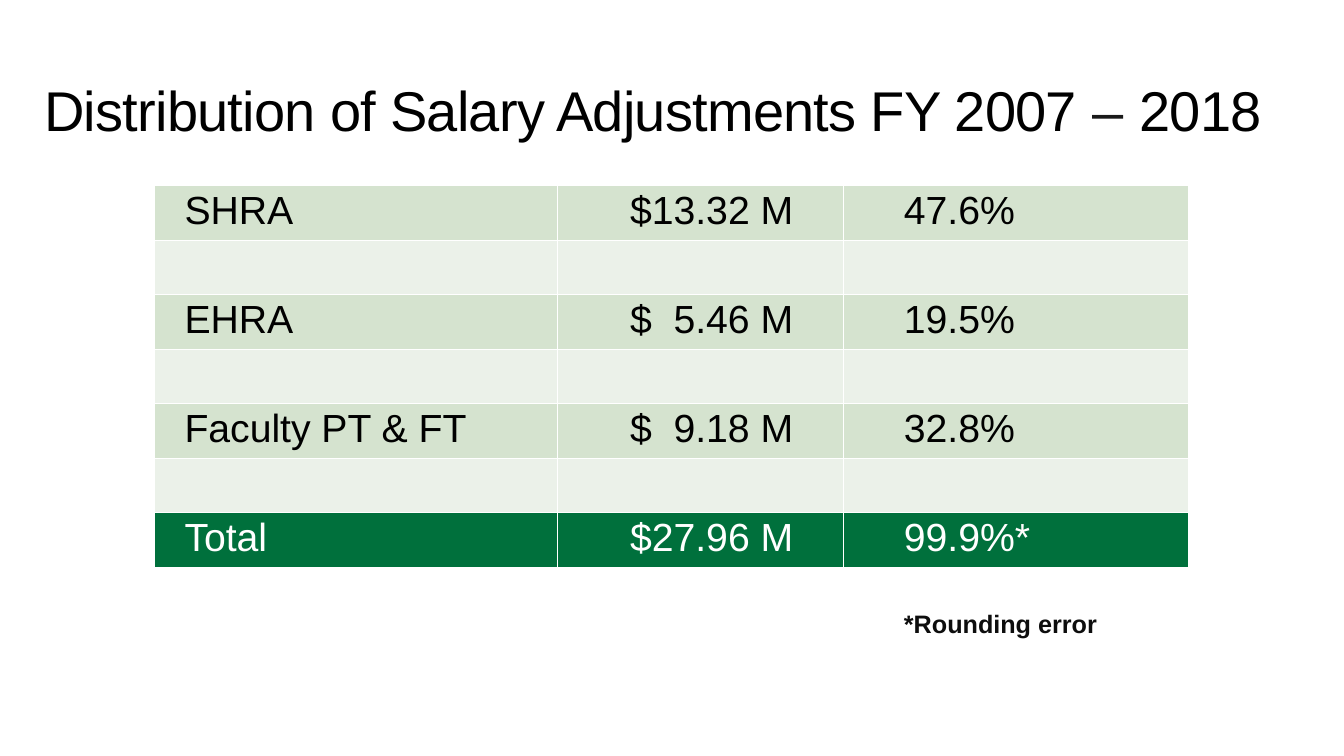
from lxml.etree import SubElement
from pptx import Presentation
from pptx.dml.color import RGBColor
from pptx.enum.text import MSO_ANCHOR as Anchor, PP_ALIGN as Align
from pptx.oxml import parse_xml
from pptx.oxml.ns import nsdecls, qn
from pptx.util import Cm, Pt

# Content
FONT = "Arial"
BLACK, INK, WHITE = "000000", "0D0D0D", "FFFFFF"
SAGE, MIST, GREEN = "D5E3CF", "EBF1E9", "00703C"

# text, colour, letter spacing in hundredths of a point
TITLE = [
    ("Distribution of Salary Adjustments FY 2007", BLACK, -50),
    (" – ", "1A1A1A", 0),
    ("2018", BLACK, -50),
]
ADJUSTMENTS = [
    ("SHRA", "$13.32 M", "47.6%"),
    ("EHRA", "$  5.46 M", "19.5%"),
    ("Faculty PT & FT", "$  9.18 M", "32.8%"),
]
TOTAL = ("Total", "$27.96 M", "99.9%*")
FOOTNOTE = "*Rounding error"

# width, left inset, right inset, alignment
COLUMNS = [
    (10.16, 0.76, 0.25, Align.LEFT),
    (7.21, 0.51, 1.27, Align.RIGHT),
    (8.69, 1.52, 1.27, Align.LEFT),
]
ROW_HEIGHT, GAP_HEIGHT, FOOTNOTE_HEIGHT = 1.36, 0.98, 1.65
TABLE_LEFT, TABLE_TOP = 3.89, 4.67
EMPTY = ("", "", "")


def color(hex_code):
    return RGBColor.from_string(hex_code)


def add_run(paragraph, text, size, hex_code, bold=False):
    run = paragraph.add_run()
    run.text = text
    run.font.name = FONT
    run.font.size = Pt(size)
    run.font.bold = bold
    run.font.color.rgb = color(hex_code)
    return run


def add_borders(cell):
    properties = cell._tc.get_or_add_tcPr()
    for position, side in enumerate(("lnL", "lnR", "lnT", "lnB")):
        line = parse_xml(f'<a:{side} {nsdecls("a")} w="{Pt(1)}"/>')
        fill = SubElement(line, qn("a:solidFill"))
        SubElement(fill, qn("a:srgbClr"), val=WHITE)
        properties.insert(position, line)


# Rows: texts, height, fill, size, text colour, bold
rows = []
for adjustment in ADJUSTMENTS:
    rows.append((adjustment, ROW_HEIGHT, SAGE, 28, BLACK, False))
    rows.append((EMPTY, ROW_HEIGHT, MIST, 18, BLACK, False))
rows.append((TOTAL, ROW_HEIGHT, GREEN, 28, WHITE, False))
rows.append((EMPTY, GAP_HEIGHT, None, 18, BLACK, False))
rows.append((("", "", FOOTNOTE), FOOTNOTE_HEIGHT, None, 18, INK, True))

presentation = Presentation()
presentation.slide_width, presentation.slide_height = Cm(33.87), Cm(19.05)
slide = presentation.slides.add_slide(presentation.slide_layouts[6])

# Title
title = slide.shapes.add_textbox(Cm(0.86), Cm(1.6), Cm(32.13), Cm(2.49)).text_frame
title.word_wrap = True
title.vertical_anchor = Anchor.MIDDLE
heading = title.paragraphs[0]
heading.line_spacing = 0.9
for text, hex_code, spacing in TITLE:
    run = add_run(heading, text, 40, hex_code)
    run.font._element.set("spc", str(spacing))

# Salary table
table = slide.shapes.add_table(
    len(rows), len(COLUMNS), Cm(TABLE_LEFT), Cm(TABLE_TOP),
    Cm(sum(column[0] for column in COLUMNS)), Cm(sum(row[1] for row in rows)),
).table
table.first_row = table.horz_banding = False
for index, column in enumerate(COLUMNS):
    table.columns[index].width = Cm(column[0])

for row_index, (texts, height, fill, size, ink, bold) in enumerate(rows):
    table.rows[row_index].height = Cm(height)
    for column_index, (text, column) in enumerate(zip(texts, COLUMNS)):
        _, left, right, alignment = column
        cell = table.cell(row_index, column_index)
        cell.margin_left, cell.margin_right = Cm(left), Cm(right)
        cell.margin_top = cell.margin_bottom = Cm(0.1)
        if fill:
            cell.fill.solid()
            cell.fill.fore_color.rgb = color(fill)
        else:
            cell.fill.background()
        add_borders(cell)
        paragraph = cell.text_frame.paragraphs[0]
        paragraph.alignment = alignment
        if text:
            add_run(paragraph, text, size, ink, bold)

presentation.save("out.pptx")
